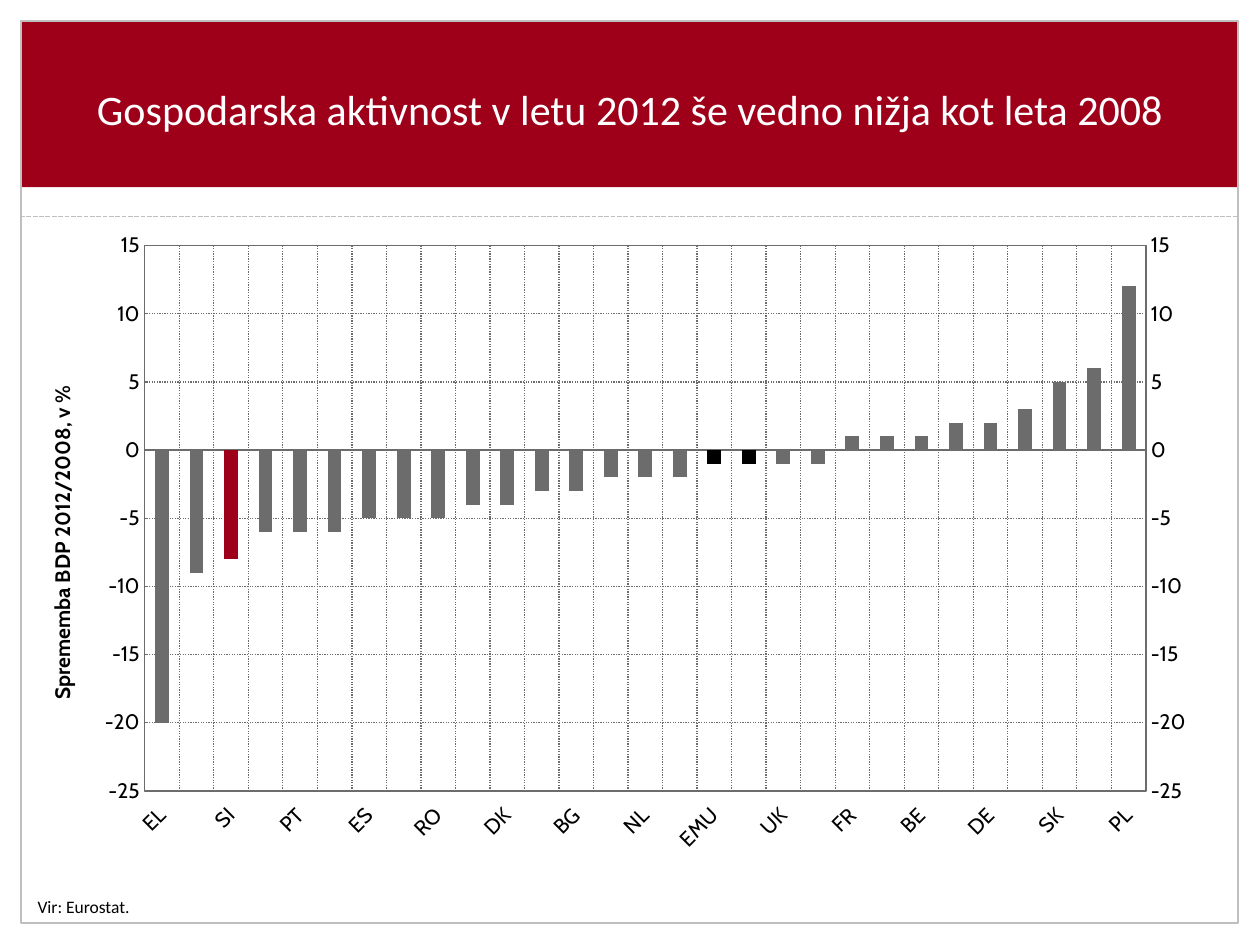
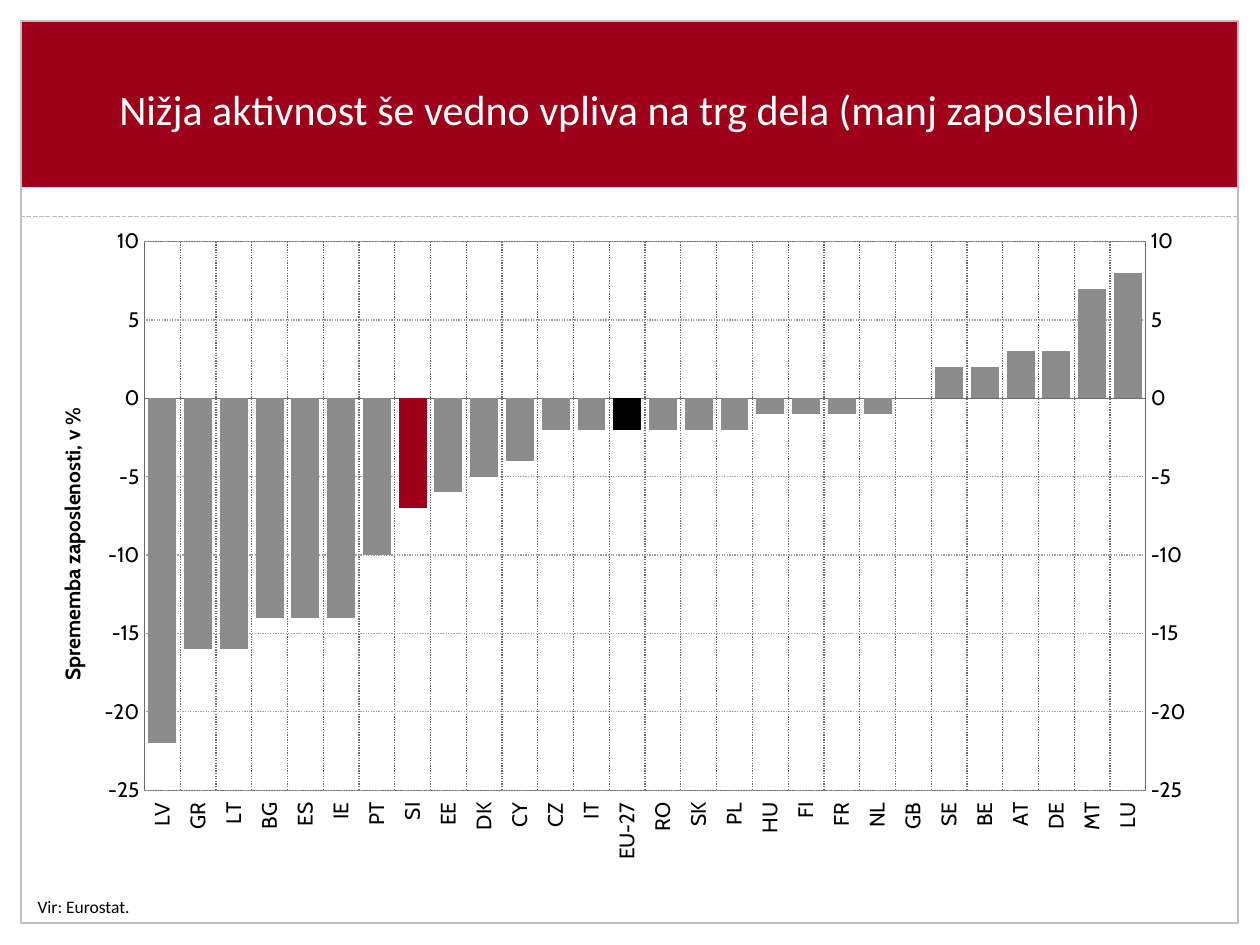
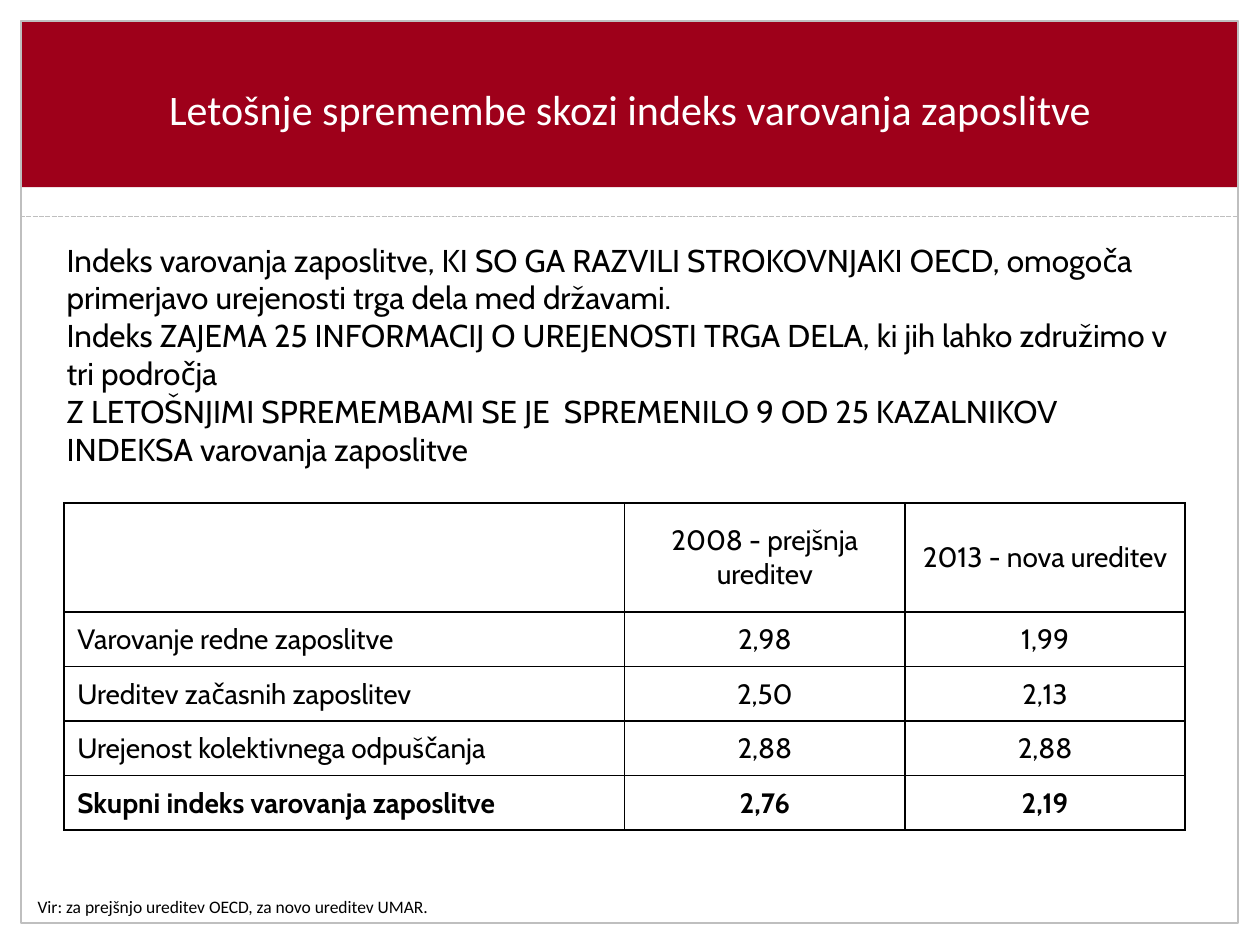
from copy import deepcopy

from lxml import etree
from pptx import Presentation
from pptx.chart.data import CategoryChartData
from pptx.dml.color import RGBColor
from pptx.enum import chart as ch, dml, shapes, text
from pptx.oxml import parse_xml
from pptx.oxml.ns import nsdecls, qn
from pptx.util import Pt

COLORS = {"red": "9E001A", "white": "FFFFFF", "black": "000000", "frame": "BFBFBF",
          "dark": "6C6C6C", "mid": "8C8C8C", "light": "A2A2A2"}
HEAD_FONT, BODY_FONT = "Calibri", "Cabin"

TITLE_BOX = (28, 28, 664, 68)
SOURCE_BOX = (14.4, 508.3, 605, 19.5)
INTRO_BOX = (31, 134, 646.5, 138)
TABLE_BOX = (36.7, 287.3, 640.6, 187)

GDP = {"EL": -20, "LV": -9, "SI": -8, "IT": -6, "PT": -6, "HU": -6, "ES": -5, "LT": -5,
       "RO": -5, "IE": -4, "DK": -4, "FI": -3, "BG": -3, "CY": -2, "NL": -2, "CZ": -2,
       "EMU": -1, "EU-27": -1, "UK": -1, "EE": -1, "FR": 1, "LU": 1, "BE": 1, "AT": 2,
       "DE": 2, "MT": 3, "SK": 5, "SE": 6, "PL": 12}
EMPLOYMENT = {"LV": -22, "GR": -16, "LT": -16, "BG": -14, "ES": -14, "IE": -14, "PT": -10,
              "SI": -7, "EE": -6, "DK": -5, "CY": -4, "CZ": -2, "IT": -2, "EU-27": -2,
              "RO": -2, "SK": -2, "PL": -2, "HU": -1, "FI": -1, "FR": -1, "NL": -1,
              "GB": 0, "SE": 2, "BE": 2, "AT": 3, "DE": 3, "MT": 7, "LU": 8}
HIGHLIGHTS = {"SI": "red", "EMU": "black", "EU-27": "black"}

INTRO = [
    "Indeks varovanja zaposlitve, KI SO GA RAZVILI STROKOVNJAKI OECD, omogoča "
    "primerjavo urejenosti trga dela med državami.",
    "Indeks ZAJEMA 25 INFORMACIJ O UREJENOSTI TRGA DELA, ki jih lahko združimo v tri področja",
    "Z LETOŠNJIMI SPREMEMBAMI SE JE  SPREMENILO 9 OD 25 KAZALNIKOV INDEKSA "
    "varovanja zaposlitve",
]
INDEX_ROWS = [
    ("", "2008 - prejšnja ureditev", "2013 - nova ureditev"),
    ("Varovanje redne zaposlitve", "2,98", "1,99"),
    ("Ureditev začasnih zaposlitev", "2,50", "2,13"),
    ("Urejenost kolektivnega odpuščanja", "2,88", "2,88"),
    ("Skupni indeks varovanja zaposlitve", "2,76", "2,19"),
]


def rgb(name):
    return RGBColor.from_string(COLORS[name])


def pts(*lengths):
    return [Pt(n) for n in lengths]


def style_font(font, name, size, color="black", bold=None):
    font.name, font.size, font.bold = name, Pt(size), bold
    font.color.rgb = rgb(color)


def style_line(line, color, width=0.75, dash=None):
    line.color.rgb = rgb(color)
    line.width = Pt(width)
    if dash:
        line.dash_style = dash


def add_run(p, content, *font):
    r = p.add_run()
    r.text = content
    style_font(r.font, *font)


def add_rect(s, box, fill=None, outline=None):
    sp = s.shapes.add_shape(shapes.MSO_SHAPE.RECTANGLE, *pts(*box))
    sp.shadow.inherit = False
    if fill:
        sp.fill.solid()
        sp.fill.fore_color.rgb = rgb(fill)
    else:
        sp.fill.background()
    if outline:
        style_line(sp.line, outline)
    else:
        sp.line.fill.background()
    return sp


def decorate_layout(layout, s):
    """Draw the shared bands and frame on slide s, then move them to its layout."""
    for ph in list(layout.placeholders):
        if ph.placeholder_format.type != shapes.PP_PLACEHOLDER.TITLE:
            ph.element.getparent().remove(ph.element)
    title = layout.placeholders[0]
    title.left, title.top, title.width, title.height = pts(*TITLE_BOX)

    margins = [(0, 528, 720, 12), (0, 0, 720, 12), (708.5, 0, 11.5, 538.5),
               (11.5, 101.5, 695.5, 24)]
    parts = [add_rect(s, box, "white") for box in margins]
    parts.append(add_rect(s, (12, 11.5, 695.5, 95.5), "red"))
    rule = s.shapes.add_connector(shapes.MSO_CONNECTOR.STRAIGHT,
                                  *pts(11.5, 123.8, 707, 123.8))
    style_line(rule.line, "frame", 0.9, dml.MSO_LINE.SQUARE_DOT)
    etree.SubElement(rule.element.spPr, qn("a:effectLst"))
    parts += [rule, add_rect(s, (12, 12, 695.5, 515.5), outline="frame")]
    for i, part in enumerate(parts):
        layout.shapes.element.insert(2 + i, part.element)


def add_textbox(s, box, paragraphs, *font):
    tb = s.shapes.add_textbox(*pts(*box))
    tf = tb.text_frame
    tf.word_wrap = True
    tf.auto_size = text.MSO_AUTO_SIZE.SHAPE_TO_FIT_TEXT
    for i, content in enumerate(paragraphs):
        p = tf.add_paragraph() if i else tf.paragraphs[0]
        add_run(p, content, *font)


def add_titled_slide(prs, layout, title, source):
    s = prs.slides.add_slide(layout)
    if len(prs.slides) == 1:
        decorate_layout(layout, s)
    tf = s.shapes.title.text_frame
    tf.vertical_anchor = text.MSO_ANCHOR.MIDDLE
    p = tf.paragraphs[0]
    p.alignment = text.PP_ALIGN.CENTER
    add_run(p, title, HEAD_FONT, 24, "white")
    add_textbox(s, SOURCE_BOX, [source], HEAD_FONT, 10)
    return s


def mirror_to_right_axis(chart):
    """Move the second series to its own plot, with a value axis on the right."""
    area = chart.element.xpath("c:chart/c:plotArea")[0]
    left = area.xpath("c:barChart")[0]
    right = deepcopy(left)
    left.remove(left.xpath("c:ser")[1])
    right.remove(right.xpath("c:ser")[0])
    left.addnext(right)

    cat_id, val_id = "50010", "50020"
    for ax, new_id in zip(right.xpath("c:axId"), (cat_id, val_id)):
        ax.set("val", new_id)
    cat = deepcopy(area.xpath("c:catAx")[0])
    val = deepcopy(area.xpath("c:valAx")[0])
    for ax, own, other in ((cat, cat_id, val_id), (val, val_id, cat_id)):
        ax.xpath("c:axId")[0].set("val", own)
        ax.xpath("c:crossAx")[0].set("val", other)
        for extra in ax.xpath("c:title | c:majorGridlines"):
            ax.remove(extra)
    cat.xpath("c:delete")[0].set("val", "1")
    val.xpath("c:axPos")[0].set("val", "r")
    val.xpath("c:crosses")[0].set("val", "max")
    area.xpath("c:valAx")[0].addnext(val)
    val.addnext(cat)


def set_plot_area(chart, frame):
    area = chart.element.xpath("c:chart/c:plotArea")[0]
    for old in area.xpath("c:layout"):
        area.remove(old)
    sizes = "".join(f'<c:{k} val="{v}"/>' for k, v in zip("xywh", frame))
    area.insert(0, parse_xml(
        f'<c:layout {nsdecls("c")}><c:manualLayout><c:layoutTarget val="inner"/>'
        f'<c:xMode val="edge"/><c:yMode val="edge"/>{sizes}</c:manualLayout></c:layout>'))
    area.append(parse_xml(
        f'<c:spPr {nsdecls("c", "a")}><a:noFill/><a:ln w="9525"><a:solidFill>'
        f'<a:srgbClr val="{COLORS["dark"]}"/></a:solidFill></a:ln></c:spPr>'))


def add_country_chart(s, box, data, kind, axis_title, top, colors, gap, grid, angle, frame):
    """Columns per country; colors are the fills of the back and front series."""
    cd = CategoryChartData(number_format="0")
    cd.categories = list(data)
    for name in ("Series 1", "Series 2"):
        cd.add_series(name, list(data.values()))
    chart = s.shapes.add_chart(kind, *pts(*box), cd).chart
    chart.has_legend = chart.has_title = False
    style_font(chart.font, BODY_FONT, 12)

    plot = chart.plots[0]
    plot.vary_by_categories = False
    plot.gap_width = gap
    for series, color in zip(plot.series, colors):
        series.invert_if_negative = False
        series.format.fill.solid()
        series.format.fill.fore_color.rgb = rgb(color)
        for i, country in enumerate(data):
            if country in HIGHLIGHTS and color != "red":
                fill = series.points[i].format.fill
                fill.solid()
                fill.fore_color.rgb = rgb(HIGHLIGHTS[country])

    cat, val = chart.category_axis, chart.value_axis
    for axis, grid_color in ((cat, "dark"), (val, grid)):
        axis.major_tick_mark = axis.minor_tick_mark = ch.XL_TICK_MARK.NONE
        axis.has_major_gridlines = True
        style_line(axis.major_gridlines.format.line, grid_color,
                   dash=dml.MSO_LINE.ROUND_DOT)
        style_line(axis.format.line, "dark")
        style_font(axis.tick_labels.font, BODY_FONT, 12)
    cat.tick_label_position = ch.XL_TICK_LABEL_POSITION.LOW
    chart.element.xpath("//c:catAx/c:txPr/a:bodyPr")[0].set("rot", str(angle * 60000))
    val.minimum_scale, val.maximum_scale, val.major_unit = -25, top, 5
    val.tick_labels.number_format = "0"
    val.tick_labels.number_format_is_linked = False
    add_run(val.axis_title.text_frame.paragraphs[0], axis_title,
            BODY_FONT, 12, "black", True)
    mirror_to_right_axis(chart)
    set_plot_area(chart, frame)


def set_borders(cell):
    tc_pr = cell._tc.get_or_add_tcPr()
    for side in "LRTB":
        tc_pr.append(parse_xml(
            f'<a:ln{side} {nsdecls("a")} w="12700"><a:solidFill>'
            f'<a:srgbClr val="{COLORS["black"]}"/></a:solidFill></a:ln{side}>'))


def add_index_table(s, box, rows):
    x, y, w, h = box
    header_h = h / 3
    tbl = s.shapes.add_table(len(rows), 3, *pts(x, y, w, h)).table
    tbl.first_row = tbl.horz_banding = False
    for col, share in zip(tbl.columns, (0.5, 0.25, 0.25)):
        col.width = Pt(w * share)
    for i, row in enumerate(rows):
        tbl.rows[i].height = Pt((h - header_h) / (len(rows) - 1) if i else header_h)
        for j, content in enumerate(row):
            cell = tbl.cell(i, j)
            cell.margin_left, cell.margin_right, cell.margin_top, cell.margin_bottom = pts(
                0.7 if j else 7.5, 0.7, 0.7, 0)
            cell.vertical_anchor = text.MSO_ANCHOR.MIDDLE
            set_borders(cell)
            if j:
                cell.fill.solid()
                cell.fill.fore_color.rgb = rgb("white")
            else:
                cell.fill.background()
            p = cell.text_frame.paragraphs[0]
            p.alignment = text.PP_ALIGN.CENTER if j else text.PP_ALIGN.LEFT
            if content:
                add_run(p, content, BODY_FONT, 16, "black", i == len(rows) - 1)


def main():
    prs = Presentation()
    prs.slide_width, prs.slide_height = pts(720, 540)
    layout = prs.slide_layouts.get_by_name("Title Only")

    s = add_titled_slide(prs, layout,
                         "Gospodarska aktivnost v letu 2012 še vedno nižja kot leta 2008",
                         "Vir: Eurostat.")
    add_country_chart(s, (25, 128, 663, 374.5), GDP, ch.XL_CHART_TYPE.COLUMN_CLUSTERED,
                      "Sprememba BDP 2012/2008, v %", 15, ("red", "dark"), 150, "dark",
                      -45, (0.087, 0.033, 0.863, 0.832))

    s = add_titled_slide(prs, layout,
                         "Nižja aktivnost še vedno vpliva na trg dela (manj zaposlenih)",
                         "Vir: Eurostat.")
    add_country_chart(s, (31, 128, 652.5, 374.5), EMPLOYMENT,
                      ch.XL_CHART_TYPE.COLUMN_STACKED,
                      "Sprememba zaposlenosti, v %", 10, ("mid", "mid"), 28, "light",
                      -90, (0.079, 0.027, 0.877, 0.837))

    s = add_titled_slide(prs, layout,
                         "Letošnje spremembe skozi indeks varovanja zaposlitve",
                         "Vir: za prejšnjo ureditev OECD, za novo ureditev UMAR.")
    add_textbox(s, INTRO_BOX, INTRO, BODY_FONT, 18)
    add_index_table(s, TABLE_BOX, INDEX_ROWS)

    prs.save("out.pptx")


if __name__ == "__main__":
    main()
